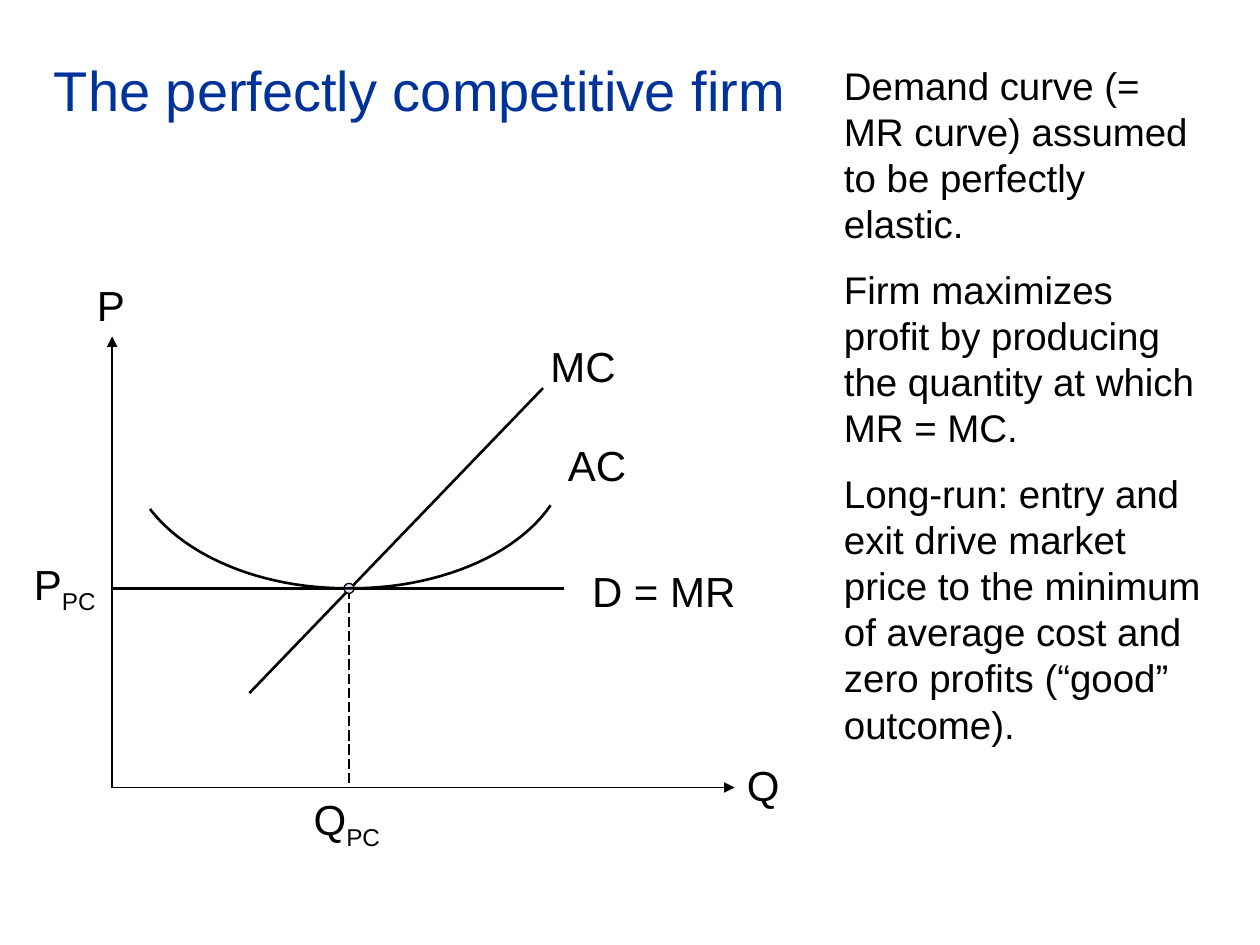
import pptx
import pptx.util
import pptx.dml.color
import pptx.enum.dml
import pptx.enum.shapes
import pptx.enum.text
import pptx.oxml.ns
from lxml import etree

Inches = pptx.util.Inches
Pt = pptx.util.Pt
Kind = pptx.enum.shapes.MSO_SHAPE
Anchor = pptx.enum.text.MSO_ANCHOR
BLACK = pptx.dml.color.RGBColor(0, 0, 0)
BLUE = pptx.dml.color.RGBColor(0, 0x33, 0x99)
PALE = pptx.dml.color.RGBColor(0xE1, 0xE1, 0xFF)

TITLE = "The perfectly competitive firm"
NOTES = [
    "Demand curve (= MR curve) assumed to be perfectly elastic.",
    "Firm maximizes profit by producing the quantity at which MR = MC.",
    "Long-run: entry and exit drive market price to the minimum of average cost "
    "and zero profits (“good” outcome).",
]
LABELS = [
    ("P", "", 0.67, 2.17, 1.25),
    ("Q", "", 5.83, 5.98, 1.25),
    ("MC", "", 4.27, 2.65, 1.25),
    ("D = MR", "", 4.6, 4.44, 1.88),
    ("P", "PC", 0.17, 4.38, 1.25),
    ("Q", "PC", 2.39, 6.25, 1.25),
    ("AC", "", 4.41, 3.44, 0.97),
]
ZERO = (0.89, 6.25)
BEST = (2.77, 4.67)
DOT = 0.08
LINES = [
    (BEST, (BEST[0], ZERO[1]), 0.75, "dash"),
    ((4.48, BEST[1]), (ZERO[0], BEST[1]), 1.5, ""),
    (ZERO, (ZERO[0], 2.67), 0.75, "arrow"),
    (ZERO, (5.83, ZERO[1]), 0.75, "arrow"),
    ((1.98, 5.5), (4.31, 3.08), 1.5, ""),
]
COST = [
    ((4.37, 4.01), (4.1, 4.41), (3.46, 4.68), (2.75, 4.67)),
    ((2.75, 4.67), (2.08, 4.67), (1.48, 4.42), (1.19, 4.04)),
]
STEPS = 24

deck = pptx.Presentation()
deck.slide_width, deck.slide_height = Inches(10), Inches(7.5)
slide = deck.slides.add_slide(deck.slide_layouts[6])
shapes = slide.shapes


def style(thing, look):
    for name, value in look.items():
        setattr(thing, name, value)


def add_text(paras, box, size, color=BLACK, anchor=Anchor.TOP):
    frame = shapes.add_textbox(*map(Inches, box)).text_frame
    style(frame, {"word_wrap": True, "vertical_anchor": anchor})
    for i, (main, sub) in enumerate(paras):
        para = frame.add_paragraph() if i else frame.paragraphs[0]
        para.space_before = Pt(size / 2 if i else 0)
        for text, base in ((main, 0), (sub, -25000)):
            if text:
                run = para.add_run()
                run.text = text
                style(run.font, {"name": "Arial", "size": Pt(size)})
                run.font.color.rgb = color
                if base:
                    run.font._element.set("baseline", str(base))


def ink(line, width):
    line.color.rgb = BLACK
    line.width = Pt(width)


def add_line(start, end, width, kind):
    link = shapes.add_connector(
        pptx.enum.shapes.MSO_CONNECTOR.STRAIGHT, *map(Inches, start + end))
    ink(link.line, width)
    if kind == "dash":
        link.line.dash_style = pptx.enum.dml.MSO_LINE.LONG_DASH
    qn = pptx.oxml.ns.qn
    if kind == "arrow":
        etree.SubElement(link.line._get_or_add_ln(), qn("a:tailEnd"), type="triangle")
    etree.SubElement(link._element.spPr, qn("a:effectLst"))


def bezier(a, b, c, d, t):
    s = 1 - t
    return tuple(
        Inches(s**3 * p + 3 * s * s * t * q + 3 * s * t * t * r + t**3 * e)
        for p, q, r, e in zip(a, b, c, d))


for item in LINES:
    add_line(*item)

dot = shapes.add_shape(
    Kind.OVAL, *(Inches(v - DOT / 2) for v in BEST), Inches(DOT), Inches(DOT))
dot.shadow.inherit = False
dot.fill.solid()
dot.fill.fore_color.rgb = PALE
ink(dot.line, 0.75)

points = [bezier(*part, k / STEPS) for part in COST for k in range(STEPS + 1)]
path = shapes.build_freeform(*points[0])
path.add_line_segments(points[1:], close=False)
curve = path.convert_to_shape()
curve.shadow.inherit = False
curve.fill.background()
ink(curve.line, 1.5)

add_text([(TITLE, "")], (0.33, 0.25, 9.34, 0.92), 32, BLUE, Anchor.MIDDLE)
add_text([(note, "") for note in NOTES], (6.6, 0.44, 3.04, 5.28), 22)
for main, sub, left, top, width in LABELS:
    add_text([(main, sub)], (left, top, width, 0.5), 24)

deck.save("out.pptx")
